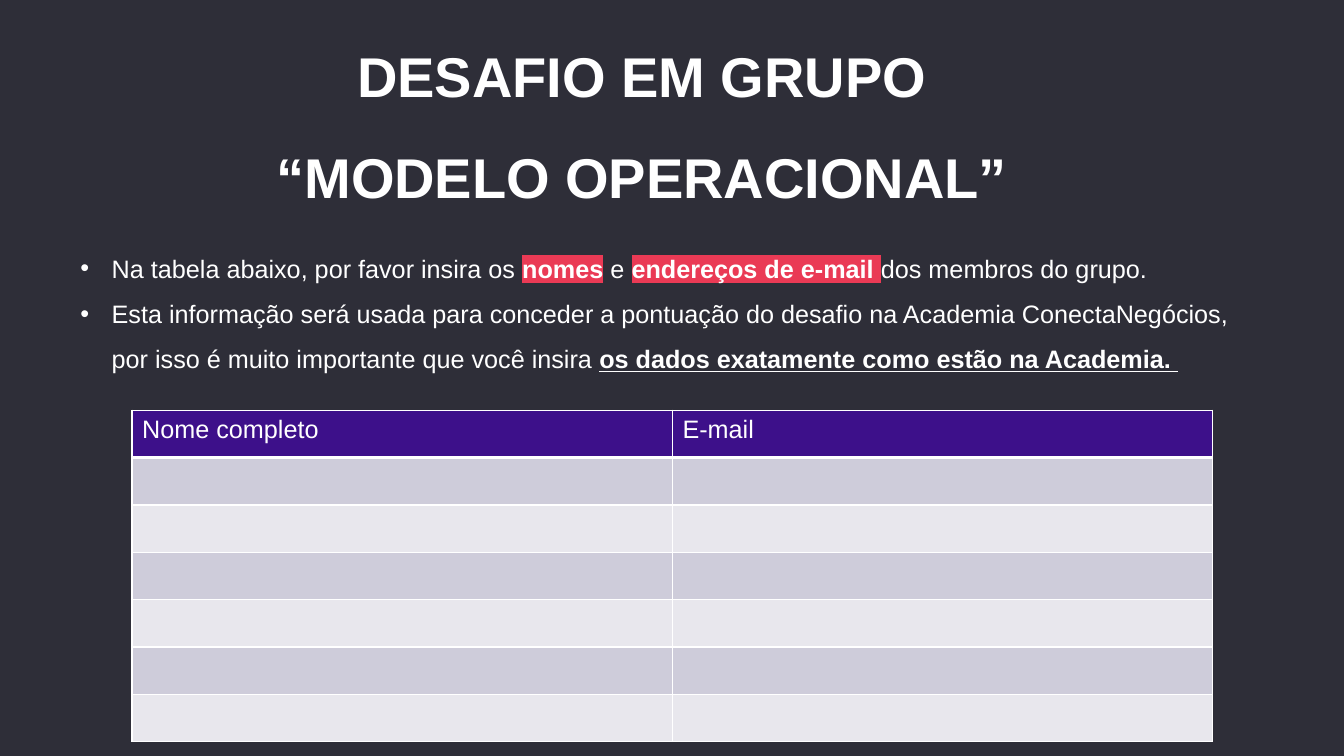
from lxml.etree import SubElement
from pptx import Presentation
from pptx.dml.color import RGBColor
from pptx.enum.text import PP_ALIGN
from pptx.oxml.ns import qn
from pptx.util import Inches, Pt

FONT = "Arial"
BACKGROUND, WHITE, HIGHLIGHT = "2E2E38", "FFFFFF", "EA3A55"
HEADER_FILL, BAND_FILLS = "3D108A", ("CECCDA", "E8E7ED")
HEADERS = ("Nome completo", "E-mail")
MEMBER_ROWS = 6
COLUMN_WIDTH, ROW_HEIGHT = 5.36, 0.47

# Each run is its text and its emphasis
INSTRUCTIONS = (
    (("Na tabela abaixo, por favor insira os ", None),
     ("nomes", "highlight"),
     (" e ", None),
     ("endereços de e-mail ", "highlight"),
     ("dos membros do grupo.", None)),
    (("Esta informação será usada para conceder a pontuação do desafio na "
      "Academia ConectaNegócios, por isso é muito importante que você insira ", None),
     ("os dados exatamente como estão na Academia. ", "underline")),
)


def color(value):
    return RGBColor.from_string(value)


def set_font(paragraph, size, bold=None):
    font = paragraph.font
    font.name, font.size, font.bold = FONT, Pt(size), bold
    font.color.rgb = color(WHITE)


def add_text_frame(slide, left, top, width, height):
    box = slide.shapes.add_textbox(*map(Inches, (left, top, width, height)))
    box.text_frame.word_wrap = True
    return box.text_frame


def add_title(slide, text):
    paragraph = add_text_frame(slide, 2.56, 0.03, 7.61, 2).paragraphs[0]
    paragraph.text = text
    paragraph.alignment = PP_ALIGN.CENTER
    paragraph.line_spacing = 1.5
    set_font(paragraph, 40, bold=True)


def add_bullet(paragraph):
    properties = paragraph._p.get_or_add_pPr()
    properties.set("marL", str(Inches(0.31)))
    properties.set("indent", str(-Inches(0.31)))
    SubElement(properties, qn("a:buFont"), typeface=FONT)
    SubElement(properties, qn("a:buChar"), char="•")


def add_run(paragraph, text, emphasis):
    run = paragraph.add_run()
    run.text = text
    if emphasis:
        run.font.bold = True
    if emphasis == "underline":
        run.font.underline = True
    if emphasis == "highlight":
        mark = SubElement(run._r.get_or_add_rPr(), qn("a:highlight"))
        SubElement(mark, qn("a:srgbClr"), val=HIGHLIGHT)


def add_instructions(slide, items):
    frame = add_text_frame(slide, 0.7, 2.31, 11.76, 1.41)
    for index, runs in enumerate(items):
        paragraph = frame.add_paragraph() if index else frame.paragraphs[0]
        paragraph.line_spacing = 1.5
        add_bullet(paragraph)
        set_font(paragraph, 18)
        for text, emphasis in runs:
            add_run(paragraph, text, emphasis)


def style_cell(cell, fill, bottom_width=1):
    properties = cell._tc.get_or_add_tcPr()
    # Borders come before the fill in the cell properties
    for side, width in (("L", 1), ("R", 1), ("T", 1), ("B", bottom_width)):
        line = SubElement(properties, qn(f"a:ln{side}"), w=str(Pt(width)))
        solid = SubElement(line, qn("a:solidFill"))
        SubElement(solid, qn("a:srgbClr"), val=WHITE)
    cell.fill.solid()
    cell.fill.fore_color.rgb = color(fill)


def add_member_table(slide):
    rows, columns = MEMBER_ROWS + 1, len(HEADERS)
    table = slide.shapes.add_table(
        rows, columns, Inches(1.31), Inches(4.07),
        Inches(COLUMN_WIDTH * columns), Inches(ROW_HEIGHT * rows)).table
    table.first_row = table.horz_banding = False

    # Header row
    for column, header in enumerate(HEADERS):
        cell = table.cell(0, column)
        cell.text = header
        set_font(cell.text_frame.paragraphs[0], 18)
        style_cell(cell, HEADER_FILL, bottom_width=3)

    # Empty banded rows
    for row in range(1, rows):
        for column in range(columns):
            style_cell(table.cell(row, column), BAND_FILLS[(row - 1) % 2])


def main():
    presentation = Presentation()
    presentation.slide_width, presentation.slide_height = Inches(13.33), Inches(7.5)
    slide = presentation.slides.add_slide(presentation.slide_layouts[6])
    slide.background.fill.solid()
    slide.background.fill.fore_color.rgb = color(BACKGROUND)

    add_title(slide, "DESAFIO EM GRUPO “MODELO OPERACIONAL”")
    add_member_table(slide)
    add_instructions(slide, INSTRUCTIONS)
    presentation.save("out.pptx")


if __name__ == "__main__":
    main()
